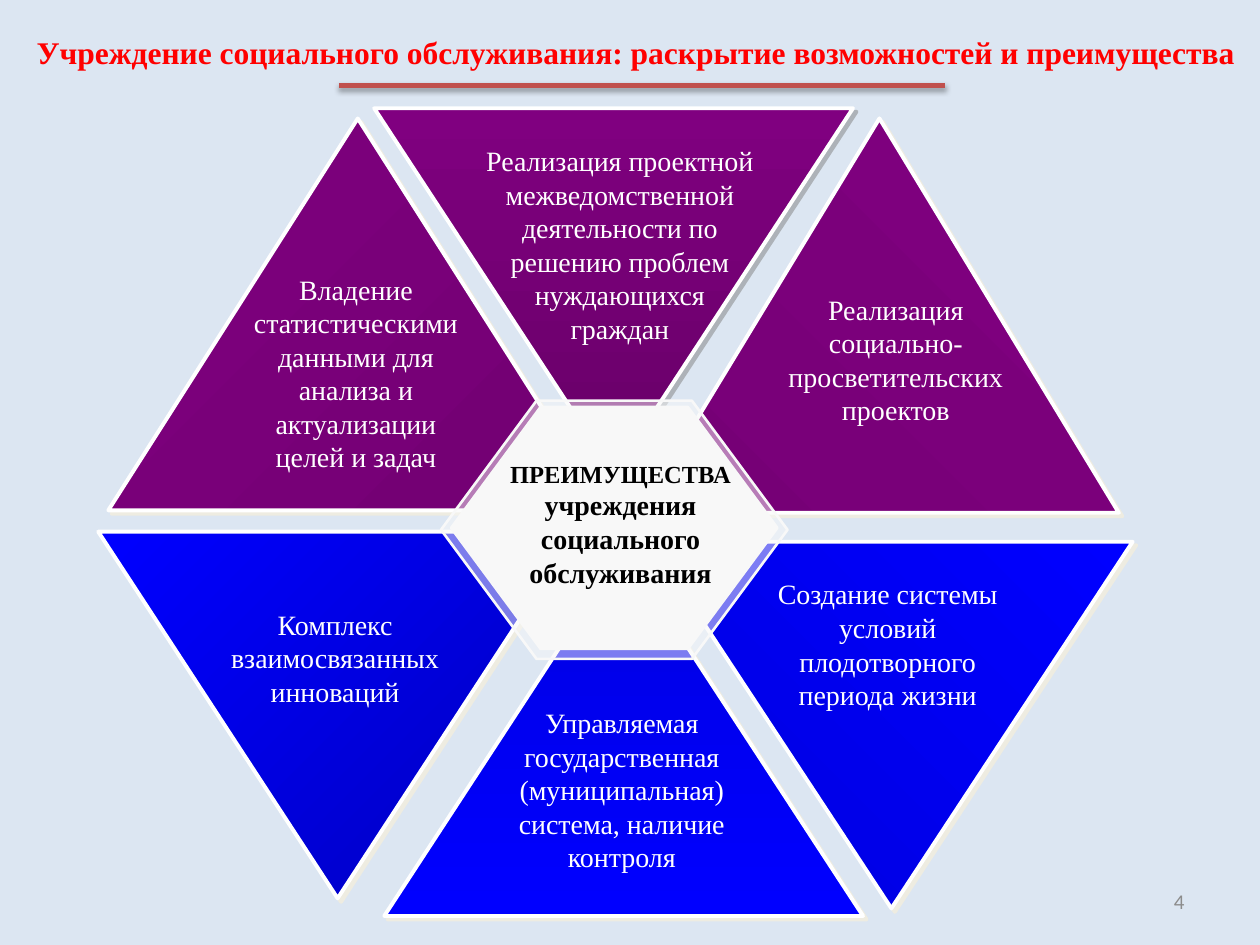
from lxml.etree import SubElement
from pptx import Presentation
from pptx.dml.color import RGBColor
from pptx.enum.shapes import MSO_CONNECTOR, MSO_SHAPE
from pptx.enum.text import MSO_ANCHOR, MSO_AUTO_SIZE, PP_ALIGN
from pptx.oxml.ns import qn
from pptx.util import Inches, Pt

SERIF = "Times New Roman"
WHITE, PALE, CREAM = "FFFFFF", "F8F8F8", "EEECE1"

# left, top, width, height, flipped, first colour, last colour, clockwise angle, shadow, shadow opacity
TRIANGLES = [
    (0.78, 4.22, 3.8, 2.91, True, "0000FF", "0000BE", 315, CREAM, 100),
    (5.08, 0.94, 3.8, 3.13, False, "760076", "800080", 315, CREAM, 100),
    (0.86, 0.94, 3.96, 3.11, False, "800080", "720072", 45, CREAM, 100),
    (2.97, 0.86, 3.8, 2.9, True, "670067", "800080", 90, "808080", 50),
    (3.05, 4.36, 3.8, 2.91, False, "0000E2", "0000FF", 90, CREAM, 100),
    (5.16, 4.3, 3.83, 2.91, True, "0000DE", "0000FF", 45, CREAM, 100),
]

# left, top, width, height, paragraphs
LABELS = [
    (3.59, 1.09, 2.66, 1.72,
     ["Реализация проектной межведомственной деятельности по решению проблем нуждающихся",
      "граждан"]),
    (6.02, 4.53, 2.05, 1.18, ["Создание системы условий плодотворного периода жизни"]),
    (3.91, 5.55, 2.05, 1.45,
     ["Управляемая государственная (муниципальная) система, наличие контроля"]),
    (1.8, 2.11, 2.05, 1.72,
     ["Владение статистическими данными для анализа и актуализации целей и задач"]),
    (5.94, 2.27, 2.34, 1.18, ["Реализация социально-просветительских проектов"]),
    (1.41, 4.77, 2.5, 0.91, ["Комплекс взаимосвязанных инноваций"]),
]


def color(value):
    return RGBColor.from_string(value)


def add_shadow(shape, value, opacity, blur, distance, angle):
    effects = shape._element.spPr.get_or_add_effectLst() if hasattr(
        shape._element.spPr, "get_or_add_effectLst") else SubElement(
        shape._element.spPr, qn("a:effectLst"))
    shadow = SubElement(effects, qn("a:outerShdw"), blurRad=str(Pt(blur)),
                        dist=str(Pt(distance)), dir=str(angle * 60000),
                        algn="ctr", rotWithShape="0")
    tint = SubElement(shadow, qn("a:srgbClr"), val=value)
    SubElement(tint, qn("a:alpha"), val=str(opacity * 1000))


def write(frame, paragraphs, value, align=PP_ALIGN.CENTER, font=SERIF, bold=False):
    """Fill a text frame with (text, size) paragraphs."""
    for index, (text, size) in enumerate(paragraphs):
        para = frame.paragraphs[0] if index == 0 else frame.add_paragraph()
        para.text = text
        para.alignment = align
        para.font.name = font
        para.font.size = Pt(size)
        para.font.bold = bold
        para.font.color.rgb = color(value)


def add_text(page, left, top, width, height, paragraphs, value, **style):
    box = page.shapes.add_textbox(Inches(left), Inches(top), Inches(width), Inches(height))
    box.text_frame.word_wrap = True
    write(box.text_frame, paragraphs, value, **style)
    return box


def set_title(page, text):
    title = page.shapes.title
    title.left, title.top = Inches(0.19), Inches(0.21)
    title.width, title.height = Inches(9.81), Inches(0.4)
    frame = title.text_frame
    frame.word_wrap = False
    frame.auto_size = MSO_AUTO_SIZE.NONE
    frame.vertical_anchor = MSO_ANCHOR.TOP
    write(frame, [(text, 18)], "FF0000", align=PP_ALIGN.LEFT, bold=True)


def add_underline(page):
    line = page.shapes.add_connector(MSO_CONNECTOR.STRAIGHT, Inches(2.69), Inches(0.68),
                                     Inches(7.5), Inches(0.68))
    line.line.color.rgb = color("C0504D")
    line.line.width = Pt(3)
    add_shadow(line, "000000", 35, 3.1, 1.8, 90)


def add_triangle(page, left, top, width, height, flipped, first, last, angle, shade, opacity):
    triangle = page.shapes.add_shape(MSO_SHAPE.ISOSCELES_TRIANGLE, Inches(left), Inches(top),
                                     Inches(width), Inches(height))
    if flipped:
        triangle._element.spPr.xfrm.set("flipV", "1")
    triangle.fill.gradient()
    triangle.fill.gradient_angle = 360 - angle
    for stop, value in zip(triangle.fill.gradient_stops, (first, last)):
        stop.color.rgb = color(value)
    triangle.line.color.rgb = color(WHITE)
    triangle.line.width = Pt(2.25)
    add_shadow(triangle, shade, opacity, 0, 2.8, 45)


def add_hexagon(page, left, top, width, height, opacity):
    hexagon = page.shapes.add_shape(MSO_SHAPE.HEXAGON, Inches(left), Inches(top),
                                    Inches(width), Inches(height))
    hexagon.adjustments[0] = 0.37
    hexagon.shadow.inherit = False
    hexagon.fill.solid()
    hexagon.fill.fore_color.rgb = color(PALE)
    tint = hexagon._element.spPr.find(qn("a:solidFill")).find(qn("a:srgbClr"))
    SubElement(tint, qn("a:alpha"), val=str(opacity * 1000))
    hexagon.line.color.rgb = color(PALE)
    hexagon.line.width = Pt(1.5)


def main():
    deck = Presentation()
    deck.slide_width, deck.slide_height = Inches(10), Inches(7.5)
    page = deck.slides.add_slide(deck.slide_layouts[5])
    page.background.fill.solid()
    page.background.fill.fore_color.rgb = color("DCE6F2")

    # Heading
    set_title(page, "Учреждение социального обслуживания: раскрытие возможностей и преимущества")
    add_underline(page)

    # Ring of advantages
    for triangle in TRIANGLES:
        add_triangle(page, *triangle)
    for left, top, width, height, texts in LABELS:
        add_text(page, left, top, width, height, [(text, 16) for text in texts], WHITE)

    # Centre
    add_hexagon(page, 3.5, 3.18, 2.75, 2.05, opacity=50)
    add_hexagon(page, 3.58, 3.23, 2.59, 1.92, opacity=100)
    add_text(page, 3.83, 3.59, 2.19, 1.14,
             [("ПРЕИМУЩЕСТВА", 14), ("учреждения социального обслуживания", 16)],
             "000000", bold=True)

    # Page number
    number = add_text(page, 7.17, 6.95, 2.33, 0.4, [("4", 12)], "8C8C8C",
                      align=PP_ALIGN.RIGHT, font="Calibri")
    number.text_frame.vertical_anchor = MSO_ANCHOR.MIDDLE

    deck.save("out.pptx")


if __name__ == "__main__":
    main()
